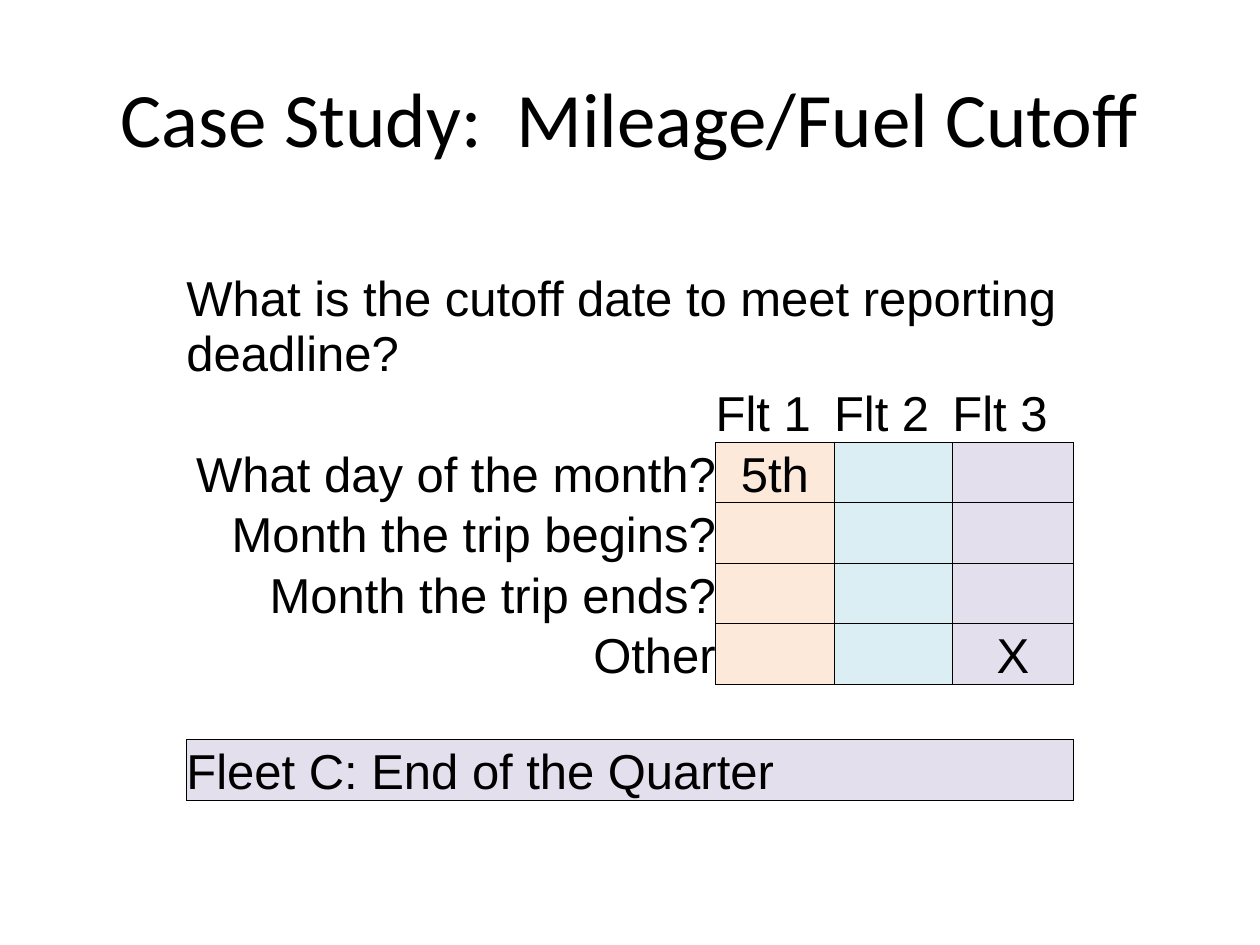
import lxml.etree
import pptx
import pptx.dml.color
import pptx.enum.text
import pptx.oxml.ns
import pptx.util

Inches = pptx.util.Inches
Pt = pptx.util.Pt
ALIGN = pptx.enum.text.PP_ALIGN
ANCHOR = pptx.enum.text.MSO_ANCHOR
qn = pptx.oxml.ns.qn

COLORS = {
    "ink": "000000",
    "fleet1": "FDE9D9",
    "fleet2": "DAEEF3",
    "fleet3": "E4DFEC",
}
FLEETS = [None, "fleet1", "fleet2", "fleet3"]
ROWS = [
    ["What is the cutoff date to meet reporting deadline?", "", "", ""],
    ["", "Flt 1", "Flt 2", "Flt 3"],
    ["What day of the month?", "5th", "", ""],
    ["Month the trip begins?", "", "", ""],
    ["Month the trip ends?", "", "", ""],
    ["Other", "", "", "X"],
    ["", "", "", ""],
    ["Fleet C: End of the Quarter", "", "", ""],
]
WIDTHS = [4.2, 0.94, 0.94, 0.96]
HEIGHTS = [0.95] + [0.48] * 5 + [0.44, 0.48]
ANSWER_ROWS = range(2, 6)
MERGED_ROWS = (0, 7)
SIDES = {"a:lnL": (0, -1), "a:lnR": (0, 1), "a:lnT": (-1, 0), "a:lnB": (1, 0)}


def cell_color(row, col):
    if row in ANSWER_ROWS:
        return FLEETS[col] if 0 <= col < len(FLEETS) else None
    return "fleet3" if row == 7 else None


def cell_align(row, col):
    if row not in ANSWER_ROWS:
        return ALIGN.LEFT
    return ALIGN.CENTER if col else ALIGN.RIGHT


class Deck:
    def __init__(self, prs):
        self.s = prs.slides.add_slide(prs.slide_layouts[5])

    def style(self, p, font, size, align):
        p.alignment = align
        for r in p.runs:
            r.font.name = font
            r.font.size = Pt(size)
            r.font.color.rgb = pptx.dml.color.RGBColor.from_string(COLORS["ink"])

    def title(self, text, left, top, width, height):
        sp = self.s.shapes.title
        sp.left, sp.top = Inches(left), Inches(top)
        sp.width, sp.height = Inches(width), Inches(height)
        tf = sp.text_frame
        tf.text = text
        tf.vertical_anchor = ANCHOR.MIDDLE
        self.style(tf.paragraphs[0], "Calibri", 44, ALIGN.CENTER)

    def borders(self, cell, row, col):
        tc_pr = cell._tc.get_or_add_tcPr()
        for tag, (down, right) in SIDES.items():
            ln = lxml.etree.SubElement(tc_pr, qn(tag), w=str(Pt(0.5)))
            if cell_color(row, col) or cell_color(row + down, col + right):
                fill = lxml.etree.SubElement(ln, qn("a:solidFill"))
                lxml.etree.SubElement(fill, qn("a:srgbClr"), val=COLORS["ink"])
            else:
                lxml.etree.SubElement(ln, qn("a:noFill"))

    def cell(self, cell, text, row, col):
        cell.margin_left = cell.margin_right = 0
        cell.margin_top = cell.margin_bottom = 0
        cell.vertical_anchor = ANCHOR.BOTTOM
        self.borders(cell, row, col)
        color = cell_color(row, col)
        if color:
            cell.fill.solid()
            cell.fill.fore_color.rgb = pptx.dml.color.RGBColor.from_string(COLORS[color])
        else:
            cell.fill.background()
        if text:
            cell.text_frame.text = text
            self.style(cell.text_frame.paragraphs[0], "Arial", 28, cell_align(row, col))

    def table(self, rows, left, top):
        table = self.s.shapes.add_table(
            len(rows), len(WIDTHS), Inches(left), Inches(top),
            Inches(sum(WIDTHS)), Inches(sum(HEIGHTS)),
        ).table
        table.first_row = table.horz_banding = False
        for column, width in zip(table.columns, WIDTHS):
            column.width = Inches(width)
        for line, height in zip(table.rows, HEIGHTS):
            line.height = Inches(height)
        for row, texts in enumerate(rows):
            for col, text in enumerate(texts):
                self.cell(table.cell(row, col), text, row, col)
        for row in MERGED_ROWS:
            table.cell(row, 0).merge(table.cell(row, len(WIDTHS) - 1))


def main():
    prs = pptx.Presentation()
    prs.slide_width, prs.slide_height = Inches(10), Inches(7.5)
    deck = Deck(prs)
    deck.title("Case Study:  Mileage/Fuel Cutoff", 0.5, 0.3, 9, 1.25)
    deck.table(ROWS, 1.48, 2.08)
    prs.save("out.pptx")


if __name__ == "__main__":
    main()
